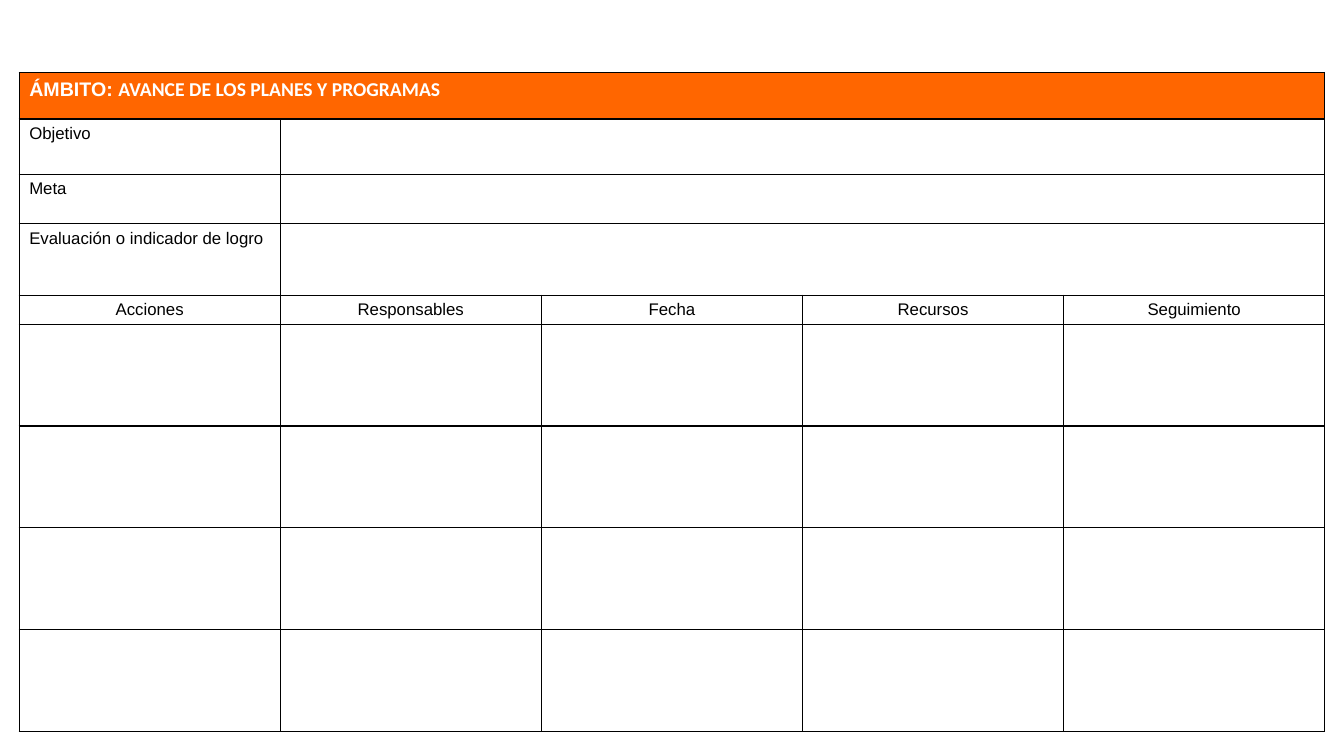
from dataclasses import dataclass

from lxml import etree
from pptx import Presentation
from pptx.dml.color import RGBColor
from pptx.enum.text import PP_ALIGN
from pptx.oxml.ns import qn
from pptx.table import Table, _Cell
from pptx.util import Emu, Pt

LEFT = PP_ALIGN.LEFT
CENTER = PP_ALIGN.CENTER

EMU_PER_PX = 9144  # 100 px to the inch
SLIDE_WIDTH, SLIDE_HEIGHT = 1333, 750
TABLE_LEFT, TABLE_TOP = 19, 72
COLUMN_COUNT, COLUMN_WIDTH = 5, 259
BORDER_POINTS = 1
COLORS = {"orange": "FF6600", "white": "FFFFFF", "black": "000000"}


@dataclass(frozen=True)
class PlanRow:
    height: int
    labels: tuple[str, ...] = ()
    merge_from: int | None = None  # first column of the cell that runs to the right edge
    align: PP_ALIGN = LEFT


PLAN_ROWS = [
    PlanRow(46, merge_from=0),
    PlanRow(55, ("Objetivo",), merge_from=1),
    PlanRow(49, ("Meta",), merge_from=1),
    PlanRow(71, ("Evaluación o indicador de logro",), merge_from=1),
    PlanRow(28, ("Acciones", "Responsables", "Fecha", "Recursos", "Seguimiento"), align=CENTER),
    *[PlanRow(101)] * 4,
]


def px(length: int) -> Emu:
    return Emu(length * EMU_PER_PX)


def add_text(cell: _Cell, text: str, *, font: str = "Arial", size: int = 12,
             color: str = "black", bold: bool = False, align: PP_ALIGN = LEFT) -> None:
    paragraph = cell.text_frame.paragraphs[0]
    paragraph.alignment = align
    run = paragraph.add_run()
    run.text = text
    run.font.name = font
    run.font.size = Pt(size)
    run.font.bold = bold
    run.font.color.rgb = RGBColor.from_string(COLORS[color])


def style_cell(cell: _Cell, fill: str) -> None:
    properties = cell._tc.get_or_add_tcPr()
    for side in ("lnL", "lnR", "lnT", "lnB"):
        line = etree.SubElement(properties, qn(f"a:{side}"), w=str(Pt(BORDER_POINTS)))
        solid = etree.SubElement(line, qn("a:solidFill"))
        etree.SubElement(solid, qn("a:srgbClr"), val=COLORS["black"])
    cell.fill.solid()
    cell.fill.fore_color.rgb = RGBColor.from_string(COLORS[fill])


def fill_row(table: Table, index: int, plan_row: PlanRow) -> None:
    table.rows[index].height = px(plan_row.height)
    for column in range(COLUMN_COUNT):
        style_cell(table.cell(index, column), "orange" if index == 0 else "white")
    if plan_row.merge_from is not None:
        table.cell(index, plan_row.merge_from).merge(table.cell(index, COLUMN_COUNT - 1))
    for column, label in enumerate(plan_row.labels):
        add_text(table.cell(index, column), label, align=plan_row.align)


def main() -> None:
    presentation = Presentation()
    presentation.slide_width = px(SLIDE_WIDTH)
    presentation.slide_height = px(SLIDE_HEIGHT)
    slide = presentation.slides.add_slide(presentation.slide_layouts[6])

    # Plan table
    table = slide.shapes.add_table(
        len(PLAN_ROWS), COLUMN_COUNT, px(TABLE_LEFT), px(TABLE_TOP),
        px(COLUMN_COUNT * COLUMN_WIDTH), px(sum(row.height for row in PLAN_ROWS)),
    ).table
    table.first_row = False
    table.horz_banding = False
    for column in table.columns:
        column.width = px(COLUMN_WIDTH)
    for index, plan_row in enumerate(PLAN_ROWS):
        fill_row(table, index, plan_row)

    # Two-font heading
    heading = table.cell(0, 0)
    add_text(heading, "ÁMBITO: ", size=14, color="white", bold=True)
    add_text(heading, "AVANCE DE LOS PLANES Y PROGRAMAS",
             font="Calibri", size=14, color="white", bold=True)

    presentation.save("out.pptx")


if __name__ == "__main__":
    main()
